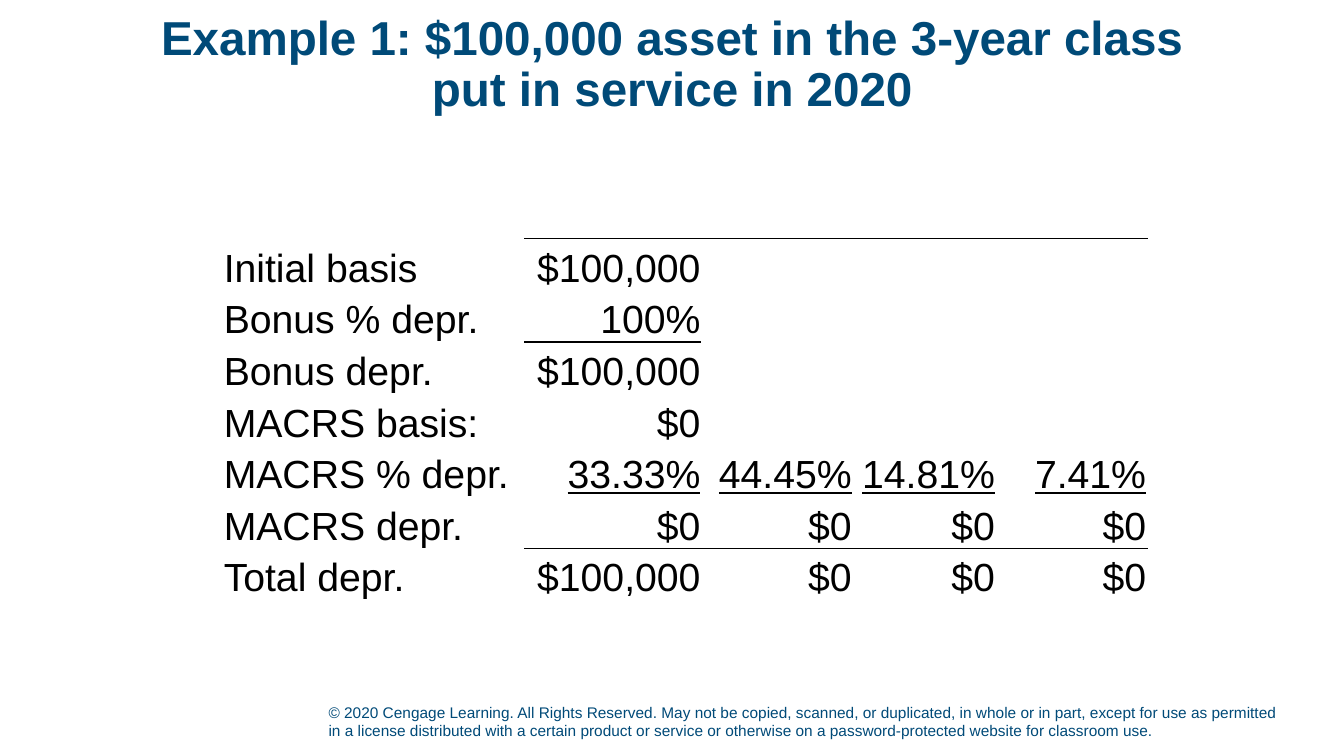
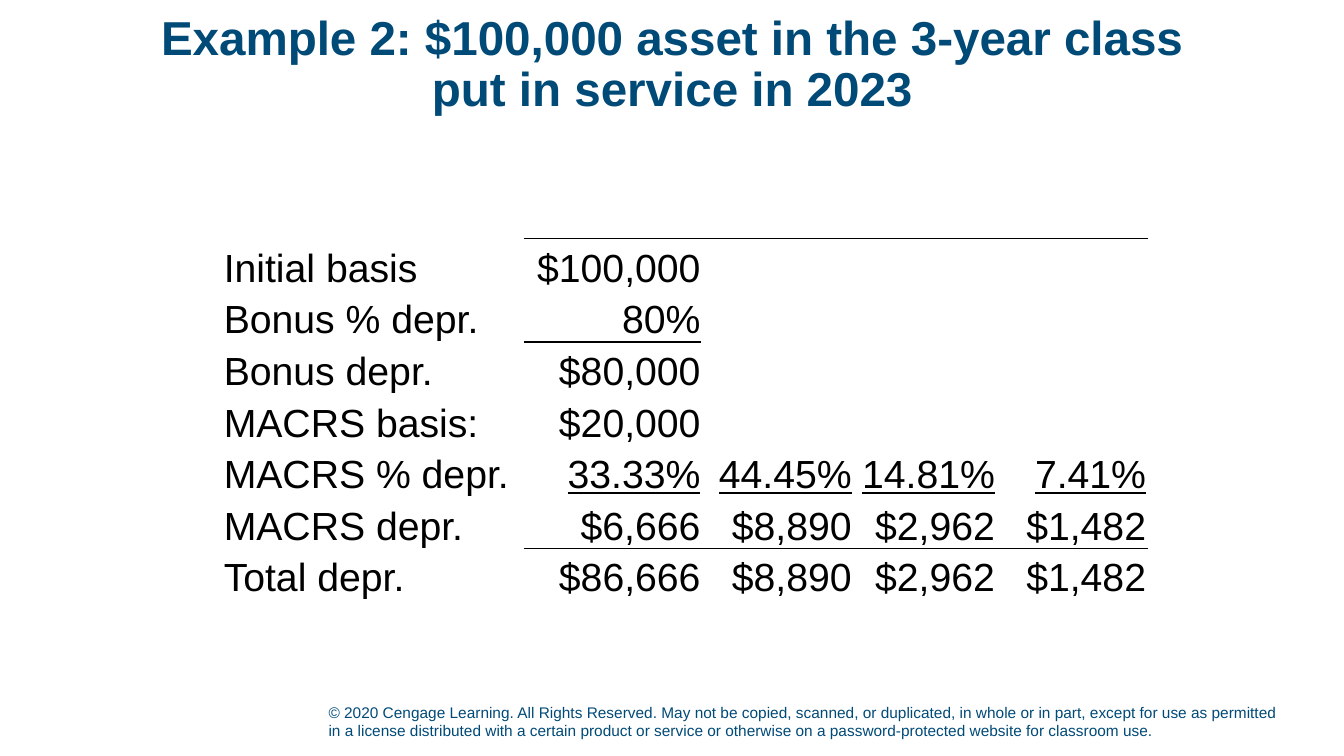
from dataclasses import dataclass

from lxml.etree import SubElement
from pptx import Presentation
from pptx.dml.color import RGBColor
from pptx.enum.text import MSO_ANCHOR as Anchor, MSO_AUTO_SIZE as AutoSize, PP_ALIGN as Align
from pptx.oxml.ns import qn
from pptx.util import Cm, Pt


@dataclass(frozen=True)
class Theme:
    font: str = "Arial"
    accent: str = "004A78"
    ink: str = "000000"
    title_size: int = 34
    table_size: int = 28
    footer_size: int = 11
    rule_width: int = 1


COPYRIGHT = (
    "© 2020 Cengage Learning. All Rights Reserved. May not be copied, scanned, or duplicated, "
    "in whole or in part, except for use as permitted in a license distributed with a certain "
    "product or service or otherwise on a password-protected website for classroom use."
)
LABELS = ["Initial basis", "Bonus % depr.", "Bonus depr.", "MACRS basis:",
          "MACRS % depr.", "MACRS depr.", "Total depr."]
MACRS_RATES = ["33.33%", "44.45%", "14.81%", "7.41%"]
COLUMN_WIDTHS = [7.62, 4.45, 3.81, 3.61, 3.81]
ROW_HEIGHT = 1.3
RATE_ROW = 1 + LABELS.index("MACRS % depr.")
# Row above each rule, with the columns that the rule spans
RULES = {0: range(1, 5), 2: range(1, 2), 6: range(1, 5)}

EXAMPLES = [
    ("Example 1: $100,000 asset in the 3-year class\vput in service in 2020",
     [["$100,000"], ["100%"], ["$100,000"], ["$0"], MACRS_RATES,
      ["$0", "$0", "$0", "$0"], ["$100,000", "$0", "$0", "$0"]]),
    ("Example 2: $100,000 asset in the 3-year class\vput in service in 2023",
     [["$100,000"], ["80%"], ["$80,000"], ["$20,000"], MACRS_RATES,
      ["$6,666", "$8,890", "$2,962", "$1,482"],
      ["$86,666", "$8,890", "$2,962", "$1,482"]]),
]


class Deck:
    def __init__(self, theme):
        self.theme = theme
        self.presentation = Presentation()
        self.presentation.slide_width = Cm(33.87)
        self.presentation.slide_height = Cm(19.05)
        self.slide = None

    def add_slide(self, title):
        layout = self.presentation.slide_layouts.get_by_name("Title Only")
        self.slide = self.presentation.slides.add_slide(layout)
        self.add_footer()
        self.set_title(title)

    def style(self, paragraph, size, color, bold=False, underline=False):
        for run in paragraph.runs:
            font = run.font
            font.name, font.size = self.theme.font, Pt(size)
            font.bold, font.underline = bold, underline
            font.color.rgb = RGBColor.from_string(color)

    def set_title(self, text):
        title = self.slide.shapes.title
        title.left, title.top = Cm(2.34), Cm(0.38)
        title.width, title.height = Cm(29.21), Cm(2.54)
        frame = title.text_frame
        frame.text = text
        frame.auto_size = AutoSize.NONE
        frame.vertical_anchor = Anchor.MIDDLE
        paragraph = frame.paragraphs[0]
        paragraph.alignment = Align.CENTER
        paragraph.line_spacing = 0.9
        self.style(paragraph, self.theme.title_size, self.theme.accent, bold=True)

    def add_footer(self):
        box = self.slide.shapes.add_textbox(Cm(8.03), Cm(17.5), Cm(24.46), Cm(1.27))
        frame = box.text_frame
        frame.word_wrap = True
        frame.vertical_anchor = Anchor.BOTTOM
        frame.text = COPYRIGHT
        self.style(frame.paragraphs[0], self.theme.footer_size, self.theme.accent)

    def add_depreciation_table(self, values):
        rows = [[]] + [[label, *amounts] for label, amounts in zip(LABELS, values)]
        frame = self.slide.shapes.add_table(
            len(rows), len(COLUMN_WIDTHS), Cm(5.61), Cm(4.72),
            Cm(sum(COLUMN_WIDTHS)), Cm(ROW_HEIGHT * len(rows)))
        table = frame.table
        table.first_row = table.horz_banding = False
        for column, width in zip(table.columns, COLUMN_WIDTHS):
            column.width = Cm(width)
        for row in table.rows:
            row.height = Cm(ROW_HEIGHT)
        for row_above, columns in RULES.items():
            for column_index in columns:
                self.add_border(table.cell(row_above, column_index), "a:lnB")
                self.add_border(table.cell(row_above + 1, column_index), "a:lnT")
        for cell in table.iter_cells():
            cell.fill.background()
        for row_index, texts in enumerate(rows):
            for column_index, text in enumerate(texts):
                self.fill_cell(table.cell(row_index, column_index), text,
                               is_amount=column_index > 0,
                               underline=row_index == RATE_ROW and column_index > 0)

    def fill_cell(self, cell, text, is_amount, underline):
        cell.text = text
        cell.vertical_anchor = Anchor.BOTTOM
        cell.margin_left = cell.margin_right = cell.margin_top = Cm(0.03)
        cell.margin_bottom = 0
        paragraph = cell.text_frame.paragraphs[0]
        paragraph.alignment = Align.RIGHT if is_amount else Align.LEFT
        self.style(paragraph, self.theme.table_size, self.theme.ink, underline=underline)

    def add_border(self, cell, edge):
        """Draw one edge of a cell; call before the cell gets its fill."""
        properties = cell._tc.get_or_add_tcPr()
        line = SubElement(properties, qn(edge), w=str(Pt(self.theme.rule_width)))
        fill = SubElement(line, qn("a:solidFill"))
        SubElement(fill, qn("a:srgbClr"), val=self.theme.ink)


def main():
    deck = Deck(Theme())
    for title, values in EXAMPLES:
        deck.add_slide(title)
        deck.add_depreciation_table(values)
    deck.presentation.save("out.pptx")


if __name__ == "__main__":
    main()
